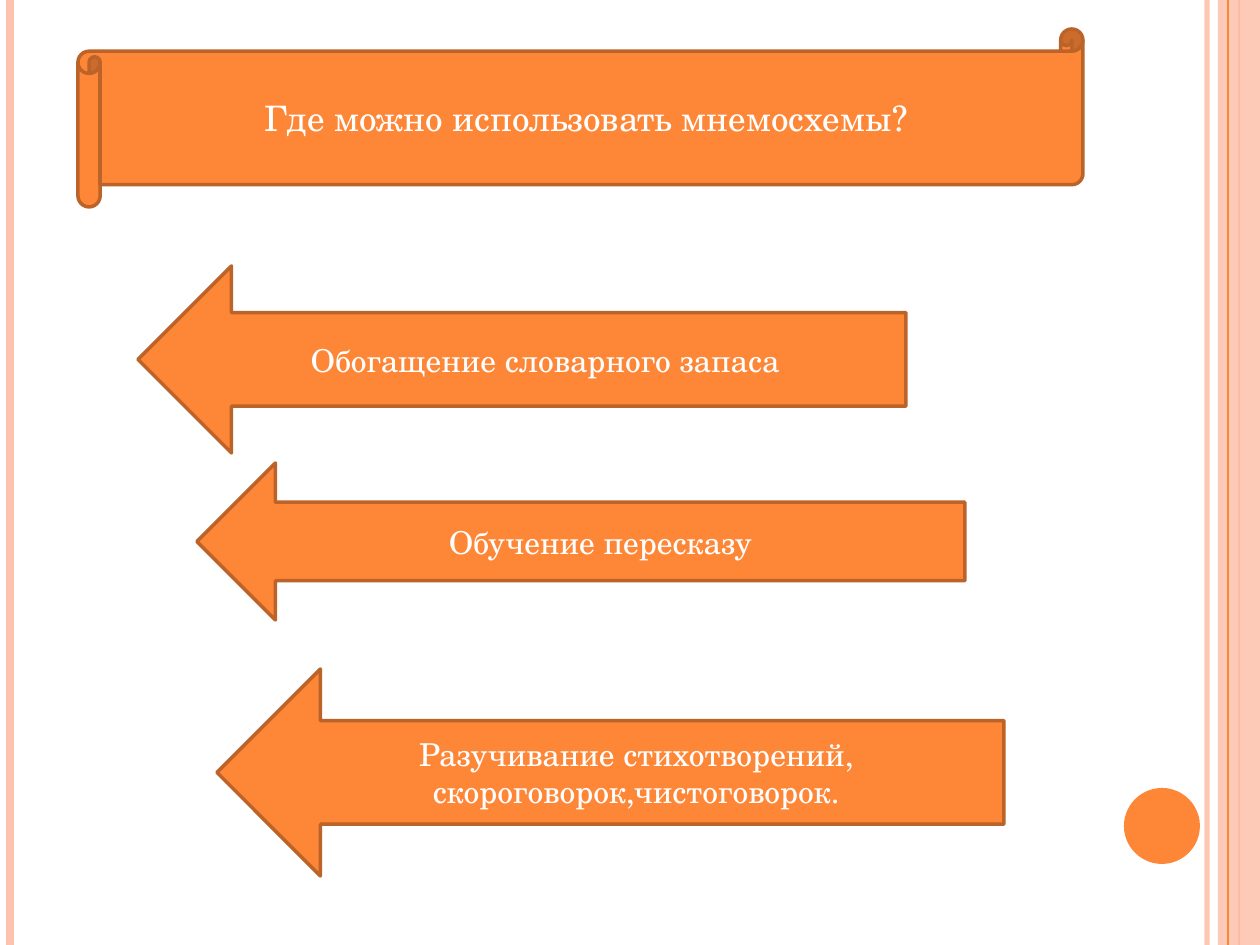
from lxml.etree import SubElement
from pptx import Presentation
from pptx.dml.color import RGBColor
from pptx.enum.shapes import MSO_CONNECTOR, MSO_SHAPE as Shape
from pptx.enum.text import MSO_ANCHOR, PP_ALIGN
from pptx.oxml.ns import qn
from pptx.util import Emu, Pt

ORANGE = RGBColor(0xFE, 0x86, 0x37)
BROWN = RGBColor(0xBC, 0x63, 0x29)
PEACH = RGBColor(0xFE, 0xC3, 0xAE)
WHITE = RGBColor(0xFF, 0xFF, 0xFF)
FONT = "TeX Gyre Schola"
WIDTH, HEIGHT = 1260, 945


def px(length):
    return Emu(round(length * 914400 / 126))


def add_figure(kind, place, color):
    figure = page.shapes.add_shape(kind, *map(px, place))
    figure.shadow.inherit = False
    figure.fill.solid()
    figure.fill.fore_color.rgb = color
    figure.line.fill.background()
    return figure


deck = Presentation()
deck.slide_width, deck.slide_height = px(WIDTH), px(HEIGHT)
page = deck.slides.add_slide(deck.slide_layouts[6])

stripes = [
    (1207, PEACH, 3, 93),
    (10, PEACH, 4.5, 100),
    (1239, ORANGE, 1.5, 100),
    (1228, ORANGE, 0.75, 100),
]
for x, color, weight, opacity in stripes:
    if x == 1228:
        band = add_figure(Shape.RECTANGLE, (1218, 0, 42, HEIGHT), PEACH)
        tint = band.fill._xPr.find(".//" + qn("a:srgbClr"))
        SubElement(tint, qn("a:alpha"), val="87000")
    stripe = page.shapes.add_connector(
        MSO_CONNECTOR.STRAIGHT, px(x), px(0), px(x), px(HEIGHT))
    stripe.line.color.rgb = color
    stripe.line.width = Pt(weight)
    if opacity < 100:
        tint = stripe.line._ln.find(".//" + qn("a:srgbClr"))
        SubElement(tint, qn("a:alpha"), val=str(opacity * 1000))
    SubElement(stripe._element.spPr, qn("a:effectLst"))

add_figure(Shape.OVAL, (1124, 788, 76, 76), ORANGE)

banners = [
    (Shape.HORIZONTAL_SCROLL, (78, 29, 1005, 178), 20,
     "Где можно использовать мнемосхемы?"),
    (Shape.LEFT_ARROW, (138, 266, 768, 187), 18,
     "Обогащение словарного запаса"),
    (Shape.LEFT_ARROW, (197, 463, 768, 157), 18,
     "Обучение пересказу"),
    (Shape.LEFT_ARROW, (217, 669, 787, 207), 18,
     "Разучивание стихотворений, скороговорок,чистоговорок."),
]
for kind, place, size, words in banners:
    banner = add_figure(kind, place, ORANGE)
    banner.line.color.rgb = BROWN
    banner.line.width = Pt(2)
    frame = banner.text_frame
    frame.word_wrap = True
    frame.vertical_anchor = MSO_ANCHOR.MIDDLE
    para = frame.paragraphs[0]
    para.alignment = PP_ALIGN.CENTER
    span = para.add_run()
    span.text = words
    span.font.name = FONT
    span.font.size = Pt(size)
    span.font.color.rgb = WHITE

deck.save("out.pptx")
